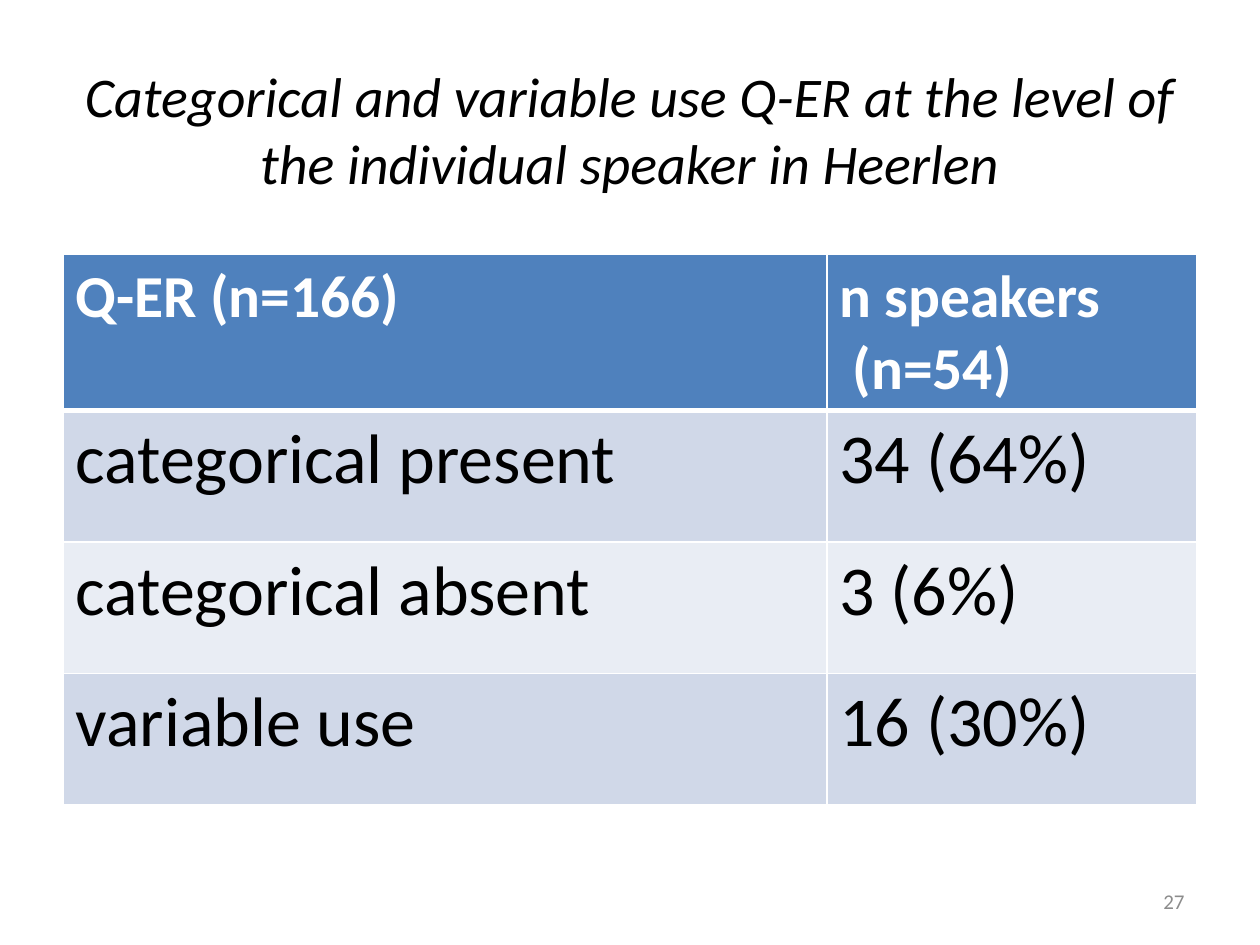
from dataclasses import dataclass

from lxml.etree import SubElement
from pptx import Presentation
from pptx.dml.color import RGBColor as Color
from pptx.enum.text import MSO_ANCHOR as Anchor, PP_ALIGN as Align
from pptx.oxml.ns import qn
from pptx.util import Cm, Pt


@dataclass(frozen=True)
class Theme:
    font: str = "Calibri"
    ink: str = "000000"
    paper: str = "FFFFFF"
    header: str = "4F81BD"
    bands: tuple = ("D0D8E8", "E9EDF4")
    muted: str = "8C8C8C"
    title_size: int = 32
    header_size: int = 34
    body_size: int = 40
    number_size: int = 12
    thin: int = 1
    thick: int = 3


class SlideBuilder:
    def __init__(self, slide, theme):
        self.slide = slide
        self.theme = theme

    def fill_text(self, frame, text, size, color, align=Align.LEFT, **formats):
        values = {"name": self.theme.font, "size": Pt(size), **formats}
        for index, line in enumerate(text.split("\n")):
            para = frame.paragraphs[0] if index == 0 else frame.add_paragraph()
            para.alignment = align
            span = para.add_run()
            span.text = line
            for name, value in values.items():
                setattr(span.font, name, value)
            span.font.color.rgb = Color.from_string(color)

    def text(self, area, text, size, color, align, **formats):
        box = self.slide.shapes.add_textbox(*map(Cm, area))
        frame = box.text_frame
        frame.word_wrap = True
        frame.vertical_anchor = Anchor.MIDDLE
        self.fill_text(frame, text, size, color, align, **formats)

    def borders(self, cell, widths):
        properties = cell._tc.get_or_add_tcPr()
        for side, width in widths.items():
            line = SubElement(properties, qn(f"a:ln{side}"), w=str(Pt(width)))
            fill = SubElement(line, qn("a:solidFill"))
            SubElement(fill, qn("a:srgbClr"), val=self.theme.paper)

    def table(self, left, top, widths, heights, rows):
        theme = self.theme
        area = (left, top, sum(widths), sum(heights))
        table = self.slide.shapes.add_table(len(rows), len(widths), *map(Cm, area)).table
        for column, width in zip(table.columns, widths):
            column.width = Cm(width)
        for index, (row, height, texts) in enumerate(zip(table.rows, heights, rows)):
            row.height = Cm(height)
            is_header = index == 0
            fill = theme.header if is_header else theme.bands[(index - 1) % 2]
            size = theme.header_size if is_header else theme.body_size
            color = theme.paper if is_header else theme.ink
            edges = {
                "L": theme.thin,
                "R": theme.thin,
                "T": theme.thick if index == 1 else theme.thin,
                "B": theme.thick if is_header else theme.thin,
            }
            for cell, text in zip(row.cells, texts):
                self.borders(cell, edges)
                cell.fill.solid()
                cell.fill.fore_color.rgb = Color.from_string(fill)
                self.fill_text(cell.text_frame, text, size, color, bold=is_header)


def main():
    theme = Theme()
    deck = Presentation()
    deck.slide_width, deck.slide_height = Cm(25.4), Cm(19.05)
    page = SlideBuilder(deck.slides.add_slide(deck.slide_layouts[6]), theme)

    page.text(
        (1.27, 0.76, 22.86, 3.68),
        "Categorical and variable use Q-ER at the level of the individual speaker in Heerlen",
        theme.title_size, theme.ink, Align.CENTER, italic=True,
    )
    page.table(
        1.27, 5.13, (15.4, 7.46), (3.15, 2.65, 2.65, 2.65),
        (
            ("Q-ER (n=166)", "n speakers\n (n=54)"),
            ("categorical present", "34 (64%)"),
            ("categorical absent", "3 (6%)"),
            ("variable use", "16 (30%)"),
        ),
    )
    page.text((18.21, 17.65, 5.92, 1.02), "27", theme.number_size, theme.muted, Align.RIGHT)
    deck.save("out.pptx")


if __name__ == "__main__":
    main()
